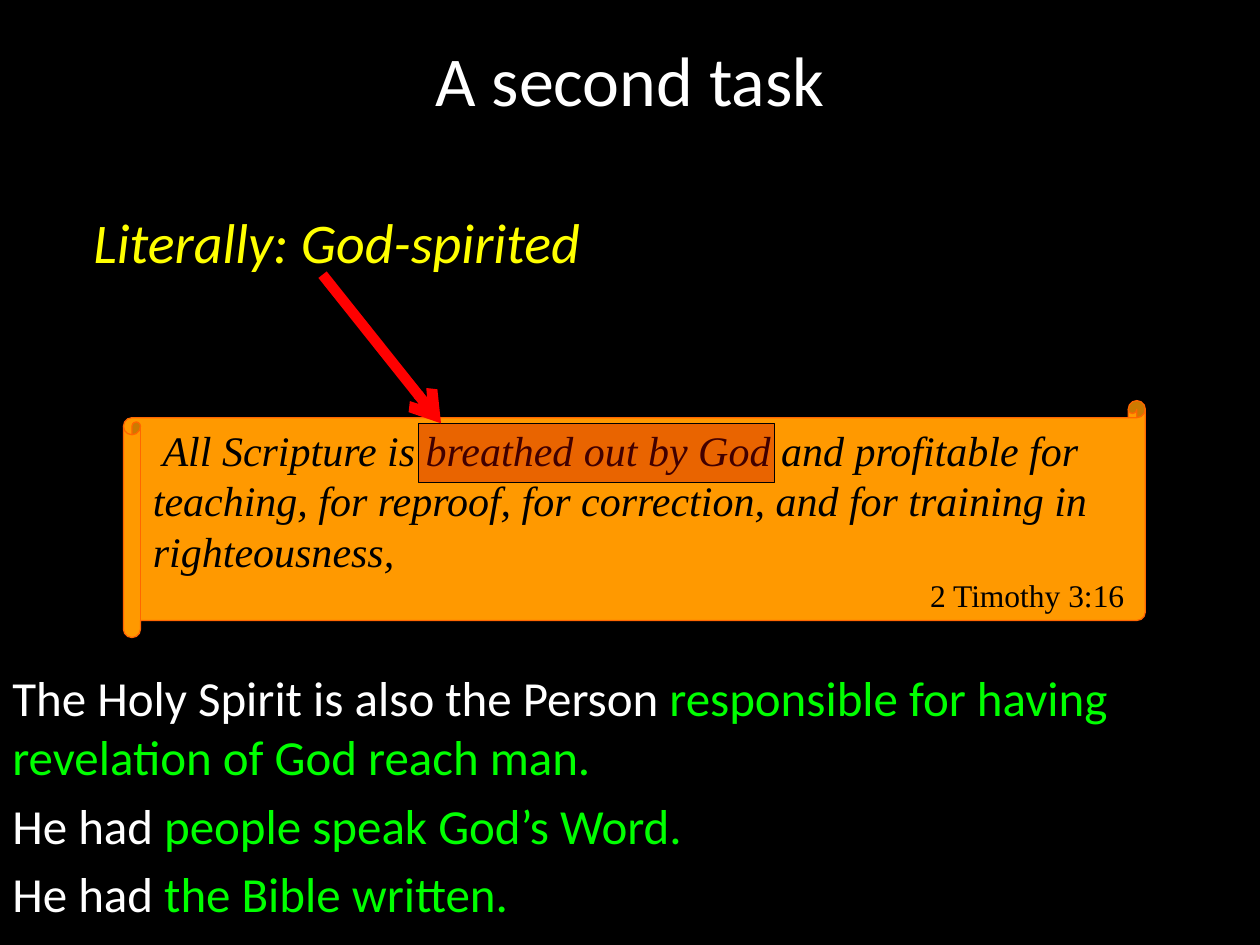
import pptx
import pptx.util
import pptx.dml.color
import pptx.enum.shapes
import pptx.enum.text
import lxml.etree
from pptx.oxml.ns import qn

Inches, Pt = pptx.util.Inches, pptx.util.Pt
SHAPE = pptx.enum.shapes.MSO_SHAPE
ALIGN = pptx.enum.text.PP_ALIGN
ANCHOR = pptx.enum.text.MSO_ANCHOR

THEME = {
    "sans": "Calibri", "serif": "Times New Roman",
    "title": 40, "callout": 32, "body": 28, "verse": 24, "source": 18,
    "black": "000000", "white": "FFFFFF", "yellow": "FFFF00", "green": "00FF00",
    "red": "FF0000", "scroll": "FF9900", "scroll_line": "FF6600", "mark": "C00000",
}


def rgb(name):
    return pptx.dml.color.RGBColor.from_string(THEME[name])


def style(p, face, size, color=None, italic=False, align=ALIGN.LEFT):
    p.alignment = align
    p.font.name = THEME[face]
    p.font.size = Pt(THEME[size])
    p.font.italic = italic
    if color:
        p.font.color.rgb = rgb(color)


prs = pptx.Presentation()
prs.slide_width, prs.slide_height = Inches(10), Inches(7.5)
s = prs.slides.add_slide(prs.slide_layouts[6])
s.background.fill.solid()
s.background.fill.fore_color.rgb = rgb("black")

# Scroll with the verse, and the highlight over its key words
scroll = s.shapes.add_shape(SHAPE.HORIZONTAL_SCROLL, Inches(0.98), Inches(3.18), Inches(8.11), Inches(1.88))
scroll.adjustments[0] = 0.072
mark = s.shapes.add_shape(SHAPE.RECTANGLE, Inches(3.32), Inches(3.36), Inches(2.83), Inches(0.47))
for sp, fill, line in [(scroll, "scroll", "scroll_line"), (mark, "mark", "black")]:
    sp.shadow.inherit = False
    sp.fill.solid()
    sp.fill.fore_color.rgb = rgb(fill)
    sp.line.color.rgb = rgb(line)
    sp.line.width = Pt(0.75)
color = mark.fill._xPr.find(qn("a:solidFill"))[0]
lxml.etree.SubElement(color, qn("a:alpha")).set("val", "34000")

tf = scroll.text_frame
tf.word_wrap = True
tf.vertical_anchor = ANCHOR.MIDDLE
p = tf.paragraphs[0]
p.text = (" All Scripture is breathed out by God and profitable for teaching, "
          "for reproof, for correction, and for training in righteousness,")
style(p, "serif", "verse", "black", italic=True)
p = tf.add_paragraph()
p.text = "2 Timothy 3:16"
style(p, "serif", "source", "black", align=ALIGN.RIGHT)

# Title
tf = s.shapes.add_textbox(0, 0, Inches(10), Inches(1.25)).text_frame
tf.word_wrap = True
tf.vertical_anchor = ANCHOR.MIDDLE
p = tf.paragraphs[0]
p.text = "A second task"
style(p, "sans", "title", "white", align=ALIGN.CENTER)

# Callout and its arrow
tf = s.shapes.add_textbox(Inches(0.62), Inches(1.6), Inches(4.11), Inches(0.64)).text_frame
tf.word_wrap = False
p = tf.paragraphs[0]
p.text = "Literally: God-spirited"
style(p, "sans", "callout", "yellow", italic=True, align=ALIGN.CENTER)

arrow = s.shapes.add_connector(pptx.enum.shapes.MSO_CONNECTOR.STRAIGHT,
                               Inches(2.56), Inches(2.18), Inches(3.5), Inches(3.36))
arrow.line.color.rgb = rgb("red")
arrow.line.width = Pt(6)
lxml.etree.SubElement(arrow.line._get_or_add_ln(), qn("a:tailEnd")).set("type", "arrow")
lxml.etree.SubElement(arrow._element.spPr, qn("a:effectLst"))

# Closing points: white lead, green emphasis
points = [
    ("The Holy Spirit is also the Person ", "responsible for having revelation of God reach man."),
    ("He had ", "people speak God’s Word."),
    ("He had ", "the Bible written."),
]
tf = s.shapes.add_textbox(0, Inches(5.25), Inches(10), Inches(2.25)).text_frame
tf.word_wrap = True
for i, point in enumerate(points):
    p = tf.add_paragraph() if i else tf.paragraphs[0]
    style(p, "sans", "body")
    p.space_before = Pt(0.2 * THEME["body"])
    for text, name in zip(point, ("white", "green")):
        r = p.add_run()
        r.text = text
        r.font.color.rgb = rgb(name)

prs.save("out.pptx")
